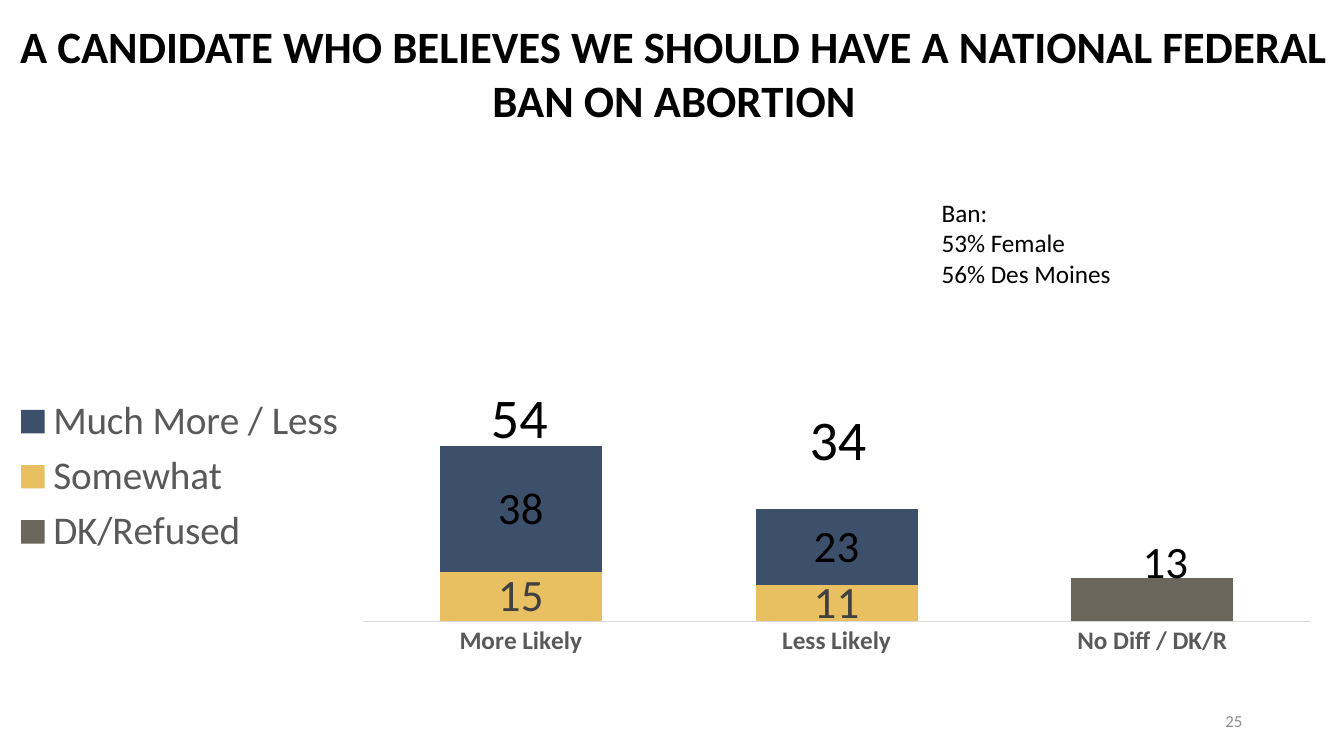
from lxml import etree
from pptx import Presentation
from pptx import util as u
from pptx.chart.data import CategoryChartData
from pptx.dml.color import RGBColor
from pptx.enum import chart as ch, text
from pptx.oxml import parse_xml
from pptx.oxml.ns import qn

BLACK = RGBColor(0x00, 0x00, 0x00)
LABEL_GREY = RGBColor(0x40, 0x40, 0x40)
AXIS_GREY = RGBColor(0x59, 0x59, 0x59)
NUMBER_GREY = RGBColor(0x8C, 0x8C, 0x8C)
LINE_GREY = RGBColor(0xD9, 0xD9, 0xD9)
STONE = RGBColor(0x6B, 0x66, 0x5B)
GOLD = RGBColor(0xE8, 0xC0, 0x62)
NAVY = RGBColor(0x3C, 0x4F, 0x6B)
FONT = "Calibri"
CHART_NS = "http://schemas.openxmlformats.org/drawingml/2006/chart"


def style_font(font, size, color, bold=False):
    font.name = FONT
    font.size = u.Pt(size)
    font.color.rgb = color
    font.bold = bold


def manual_layout(**settings):
    layout = parse_xml(f'<c:layout xmlns:c="{CHART_NS}"><c:manualLayout/></c:layout>')
    for name, value in settings.items():
        etree.SubElement(layout[0], qn(f"c:{name}")).set("val", str(value))
    return layout


deck = Presentation()
deck.slide_width = u.Inches(13.33)
deck.slide_height = u.Inches(7.5)
page = deck.slides.add_slide(deck.slide_layouts[6])

answers = CategoryChartData()
answers.categories = ["More Likely", "Less Likely", "No Diff / DK/R"]
answers.add_series("DK/Refused", [None, None, 13])
answers.add_series("Somewhat", [15, 11, None])
answers.add_series("Much More / Less", [38, 23, None])
chart = page.shapes.add_chart(
    ch.XL_CHART_TYPE.COLUMN_STACKED,
    u.Inches(0), u.Inches(2.74), u.Inches(13.14), u.Inches(3.98), answers,
).chart
chart.has_title = False
style_font(chart.font, 10, BLACK)

chart.has_legend = True
chart.legend.position = ch.XL_LEGEND_POSITION.LEFT
chart.legend.include_in_layout = False
style_font(chart.legend.font, 28, AXIS_GREY)

likelihood = chart.category_axis
likelihood.major_tick_mark = ch.XL_TICK_MARK.NONE
likelihood.format.line.color.rgb = LINE_GREY
likelihood.format.line.width = u.Pt(0.75)
style_font(likelihood.tick_labels.font, 18, AXIS_GREY, True)

percent = chart.value_axis
percent.minimum_scale = 0
percent.maximum_scale = 100
percent.has_major_gridlines = False
percent.visible = False

plot = chart.plots[0]
plot.gap_width = 95
plot.overlap = 100
plot.vary_by_categories = False
series_colors = [(STONE, BLACK), (GOLD, LABEL_GREY), (NAVY, BLACK)]
for series, (fill_color, label_color) in zip(plot.series, series_colors):
    series.format.fill.solid()
    series.format.fill.fore_color.rgb = fill_color
    series.data_labels.show_value = True
    style_font(series.data_labels.font, 32, label_color)

refused = plot.series[0]
style_font(refused.points[2].data_label.font, 32, BLACK)
label_xml = refused.data_labels._element.find(qn("c:dLbl"))
label_xml.find(qn("c:idx")).addnext(manual_layout(x=0.01, y=-0.09))

plot_area = chart._chartSpace.chart.plotArea
for old_layout in plot_area.findall(qn("c:layout")):
    plot_area.remove(old_layout)
plot_area.insert(0, manual_layout(
    layoutTarget="inner", xMode="edge", yMode="edge",
    x=0.274, y=0.038, w=0.715, h=0.822,
))

LEFT, CENTER, RIGHT = text.PP_ALIGN.LEFT, text.PP_ALIGN.CENTER, text.PP_ALIGN.RIGHT
TOP, MIDDLE = text.MSO_ANCHOR.TOP, text.MSO_ANCHOR.MIDDLE
TITLE = "A CANDIDATE WHO BELIEVES WE SHOULD HAVE A NATIONAL FEDERAL BAN ON ABORTION"
captions = [
    (TITLE, (0.04, 0.14, 13.29, 1.99), CENTER, TOP, 32, BLACK, True),
    ("25", (9.42, 6.95, 3, 0.4), RIGHT, MIDDLE, 12, NUMBER_GREY, False),
    ("54", (4.74, 3.75, 0.82, 0.77), CENTER, TOP, 40, BLACK, False),
    ("34", (7.9, 3.96, 0.82, 0.77), CENTER, TOP, 40, BLACK, False),
    ("Ban:\n53% Female\n56% Des Moines", (9.24, 1.91, 2.89, 1.01), LEFT, TOP, 18, BLACK, False),
]
for wording, place, align, anchor, size, color, bold in captions:
    box = page.shapes.add_textbox(*map(u.Inches, place))
    frame = box.text_frame
    frame.word_wrap = True
    frame.vertical_anchor = anchor
    frame.text = wording
    for para in frame.paragraphs:
        para.alignment = align
        for span in para.runs:
            style_font(span.font, size, color, bold)

deck.save("out.pptx")
